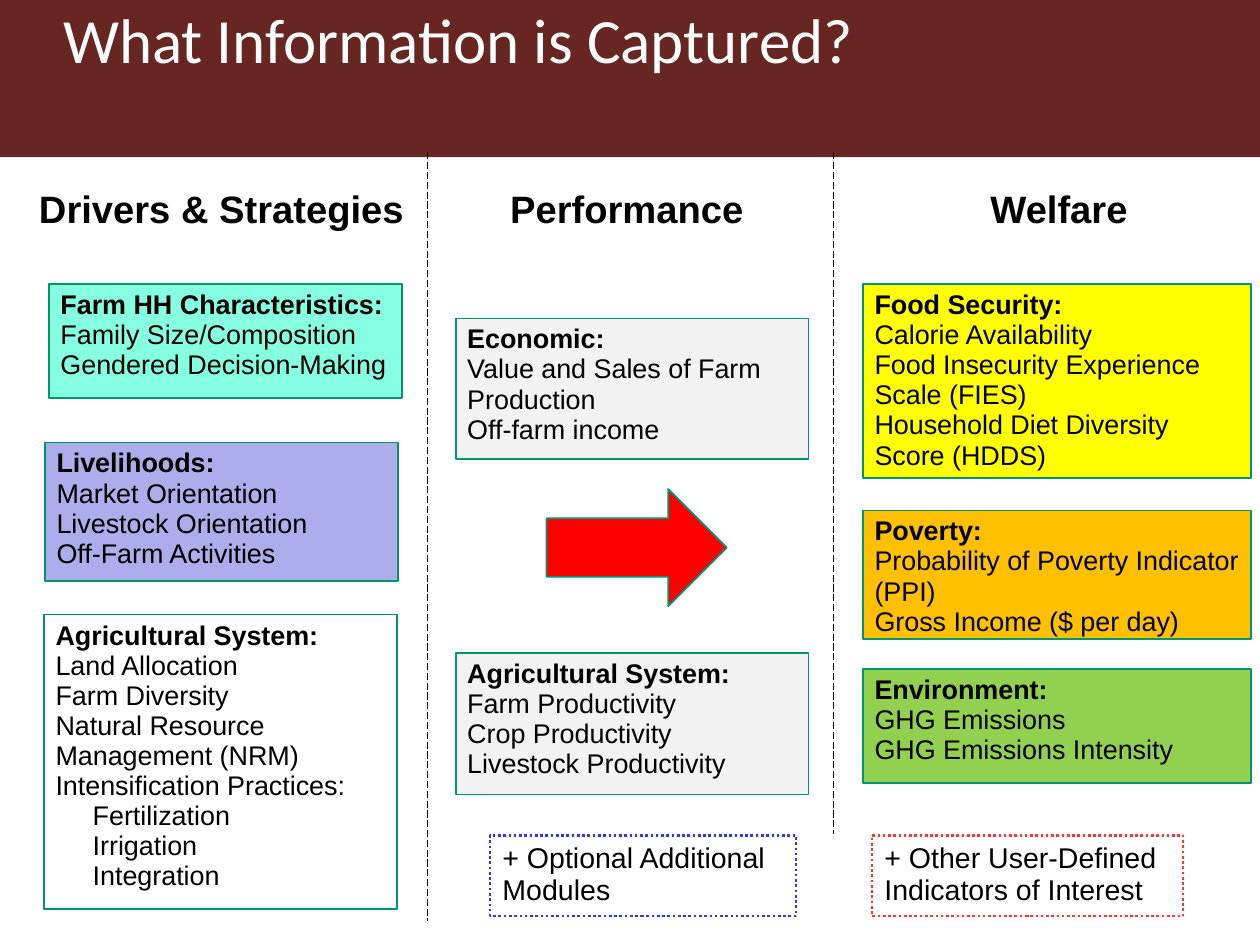
import dataclasses

import lxml.etree
import pptx
import pptx.dml.color
import pptx.enum.dml
import pptx.enum.shapes
import pptx.enum.text
import pptx.oxml.ns
import pptx.util

Cm = pptx.util.Cm
Pt = pptx.util.Pt
RGB = pptx.dml.color.RGBColor.from_string
SHAPE = pptx.enum.shapes.MSO_SHAPE
DASH = pptx.enum.dml.MSO_LINE
ALIGN = pptx.enum.text.PP_ALIGN


@dataclasses.dataclass(frozen=True)
class Theme:
    banner: str = "682622"
    title: str = "FFFFFF"
    ink: str = "000000"
    outline: str = "00956F"
    mint: str = "85FFE0"
    lavender: str = "ADADEB"
    white: str = "FFFFFF"
    grey: str = "F2F2F2"
    yellow: str = "FFFF00"
    orange: str = "FFC000"
    green: str = "92D050"
    arrow: str = "FF0000"
    optional: str = "3333FF"
    user_defined: str = "FF3333"
    title_font: str = "Calibri"
    body_font: str = "Arial"
    title_size: float = 36
    heading_size: float = 21.8
    note_size: float = 16.3
    body_size: float = 15.4


theme = Theme()


def add_figure(kind, box, fill=None, outline=None, width=1):
    """Add a preset shape; a missing fill or outline is left clear."""
    figure = slide.shapes.add_shape(kind, *map(Cm, box))
    figure.shadow.inherit = False
    if fill:
        figure.fill.solid()
        figure.fill.fore_color.rgb = RGB(fill)
    else:
        figure.fill.background()
    if outline:
        figure.line.color.rgb = RGB(outline)
        figure.line.width = Pt(width)
    else:
        figure.line.fill.background()
    return figure


def write_lines(frame, lines, size, bold_first=False, align=ALIGN.LEFT, inset=(0.23, 0.13)):
    """Fill a frame with one paragraph per line; a leading tab indents the line."""
    frame.word_wrap = True
    frame.vertical_anchor = pptx.enum.text.MSO_ANCHOR.TOP
    frame.margin_left = frame.margin_right = Cm(inset[0])
    frame.margin_top = frame.margin_bottom = Cm(inset[1])
    for number, line in enumerate(lines):
        paragraph = frame.paragraphs[0] if number == 0 else frame.add_paragraph()
        paragraph.text = line.lstrip("\t")
        paragraph.alignment = align
        paragraph.line_spacing = 0.93
        if line.startswith("\t"):
            paragraph._p.get_or_add_pPr().set("marL", str(Cm(0.75)))
        paragraph.font.name = theme.body_font
        paragraph.font.size = Pt(size)
        paragraph.font.bold = bold_first and number == 0
        paragraph.font.color.rgb = RGB(theme.ink)


deck = pptx.Presentation()
deck.slide_width, deck.slide_height = Cm(25.4), Cm(19.05)
slide = deck.slides.add_slide(deck.slide_layouts[5])

# Title on its banner, which goes behind everything else
banner = add_figure(SHAPE.RECTANGLE, (0, 0, 25.4, 3.17), theme.banner)
slide.shapes._spTree.insert(2, banner._element)

title = slide.shapes.title
title.left, title.top, title.width, title.height = Cm(1.27), Cm(0), Cm(22.86), Cm(3.17)
title.text = "What Information is Captured?"
title_frame = title.text_frame
title_frame.vertical_anchor = pptx.enum.text.MSO_ANCHOR.TOP
title_frame.margin_left = title_frame.margin_right = 0
title_frame.margin_top = title_frame.margin_bottom = 0
title_line = title_frame.paragraphs[0]
title_line.alignment = ALIGN.LEFT
title_line.font.name = theme.title_font
title_line.font.size = Pt(theme.title_size)
title_line.font.color.rgb = RGB(theme.title)

# Column headings
for heading, left, width in (
    ("Drivers & Strategies", -0.18, 9.3),
    ("Performance", 8.03, 9.22),
    ("Welfare", 17.02, 8.66),
):
    label = slide.shapes.add_textbox(Cm(left), Cm(3.68), Cm(width), Cm(1.17))
    write_lines(label.text_frame, [heading], theme.heading_size, True, ALIGN.CENTER)

# Dashed dividers between the columns
for x, bottom in ((8.61, 18.57), (16.81, 16.81)):
    divider = slide.shapes.add_connector(
        pptx.enum.shapes.MSO_CONNECTOR.STRAIGHT, Cm(x), Cm(3.07), Cm(x), Cm(bottom))
    divider.line.color.rgb = RGB(theme.ink)
    divider.line.width = Pt(0.5)
    divider.line.dash_style = DASH.LONG_DASH
    lxml.etree.SubElement(divider._element.spPr, pptx.oxml.ns.qn("a:effectLst"))

# Indicator cards: box, fill, heading and items
cards = (
    ((0.99, 5.72, 7.11, 2.31), theme.mint,
     ["Farm HH Characteristics:", "Family Size/Composition", "Gendered Decision-Making"]),
    ((0.91, 8.92, 7.11, 2.79), theme.lavender,
     ["Livelihoods:", "Market Orientation", "Livestock Orientation", "Off-Farm Activities"]),
    ((0.89, 12.39, 7.11, 5.94), theme.white,
     ["Agricultural System:", "Land Allocation", "Farm Diversity",
      "Natural Resource Management (NRM)", "Intensification Practices:",
      "\tFertilization", "\tIrrigation", "\tIntegration"]),
    ((9.19, 6.42, 7.11, 2.84), theme.grey,
     ["Economic:", "Value and Sales of Farm Production", "Off-farm income"]),
    ((9.19, 13.16, 7.11, 2.86), theme.grey,
     ["Agricultural System:", "Farm Productivity", "Crop Productivity",
      "Livestock Productivity"]),
    ((17.4, 5.73, 7.82, 3.91), theme.yellow,
     ["Food Security:", "Calorie Availability", "Food Insecurity Experience Scale (FIES)",
      "Household Diet Diversity Score (HDDS)"]),
    ((17.4, 10.29, 7.82, 2.59), theme.orange,
     ["Poverty:", "Probability of Poverty Indicator (PPI)", "Gross Income ($ per day)"]),
    ((17.4, 13.49, 7.82, 2.29), theme.green,
     ["Environment:", "GHG Emissions", "GHG Emissions Intensity"]),
)
for box, fill, lines in cards:
    card = add_figure(SHAPE.RECTANGLE, box, fill, theme.outline)
    write_lines(card.text_frame, lines, theme.body_size, True)

add_figure(SHAPE.RIGHT_ARROW, (11.02, 9.86, 3.63, 2.36), theme.arrow, theme.outline)

# Dotted notes on optional content
for note, left, width, outline in (
    ("+ Optional Additional Modules", 9.88, 6.17, theme.optional),
    ("+ Other User-Defined Indicators of Interest", 17.58, 6.27, theme.user_defined),
):
    note_box = add_figure(SHAPE.RECTANGLE, (left, 16.84, width, 1.63), None, outline, 1.5)
    note_box.line.dash_style = DASH.ROUND_DOT
    write_lines(note_box.text_frame, [note], theme.note_size, inset=(0.25, 0.15))

deck.save("out.pptx")
